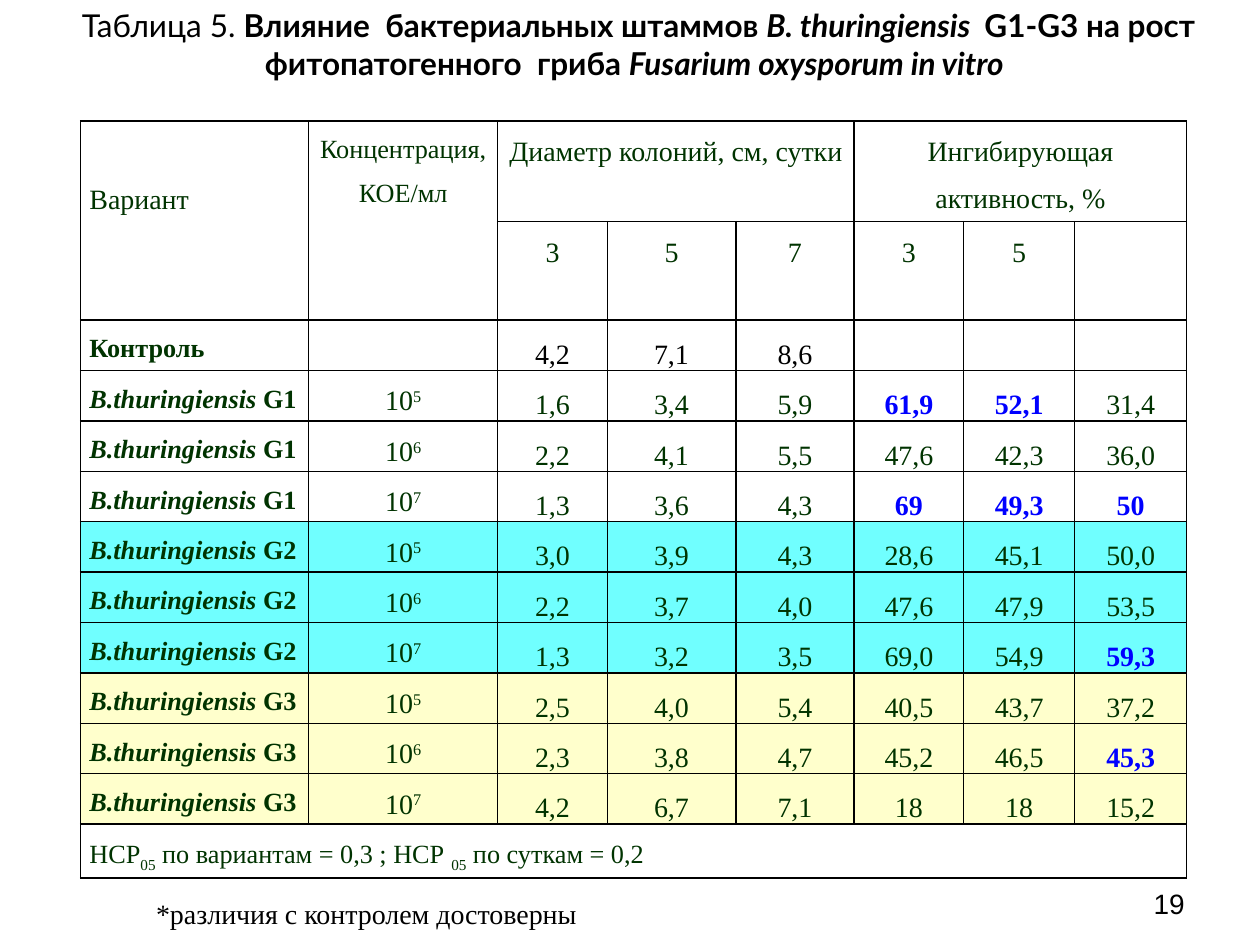
import pptx
import pptx.dml.color
import pptx.enum.text
import pptx.oxml
import pptx.oxml.ns
import pptx.util

Inches = pptx.util.Inches
Pt = pptx.util.Pt
ALIGN = pptx.enum.text.PP_ALIGN
ANCHOR = pptx.enum.text.MSO_ANCHOR

COLORS = {
    "black": "000000",
    "green": "003300",
    "blue": "0000FF",
    "cyan": "70FFFF",
    "cream": "FFFFCC",
}
SERIF = "Times New Roman"

TITLE = [
    (" Таблица 5. ", {}),
    ("Влияние  бактериальных штаммов ", {"bold": True}),
    ("B. thuringiensis  ", {"bold": True, "italic": True}),
    ("G1-G3 на рост фитопатогенного  гриба ", {"bold": True}),
    ("Fusarium oxysporum in vitro", {"bold": True, "italic": True}),
]
FOOTNOTE = "*различия с контролем достоверны"
PAGE_NUMBER = "19"

HEADERS = [
    (0, 0, 1, 0, "Вариант", 16, ALIGN.LEFT, 0.38),
    (0, 1, 1, 1, "Концентрация, КОЕ/мл", 15, ALIGN.CENTER, 0),
    (0, 2, 0, 4, "Диаметр колоний, см, сутки", 16, ALIGN.CENTER, 0),
    (0, 5, 0, 7, "Ингибирующая активность, %", 16, ALIGN.CENTER, 0),
]
DAYS = ["3", "5", "7", "3", "5"]
CONTROL = ("Контроль", ["4,2", "7,1", "8,6"])
STRAINS = [
    ("G1", None, [
        ("5", ["1,6", "3,4", "5,9", "61,9", "52,1", "31,4"]),
        ("6", ["2,2", "4,1", "5,5", "47,6", "42,3", "36,0"]),
        ("7", ["1,3", "3,6", "4,3", "69", "49,3", "50"]),
    ]),
    ("G2", "cyan", [
        ("5", ["3,0", "3,9", "4,3", "28,6", "45,1", "50,0"]),
        ("6", ["2,2", "3,7", "4,0", "47,6", "47,9", "53,5"]),
        ("7", ["1,3", "3,2", "3,5", "69,0", "54,9", "59,3"]),
    ]),
    ("G3", "cream", [
        ("5", ["2,5", "4,0", "5,4", "40,5", "43,7", "37,2"]),
        ("6", ["2,3", "3,8", "4,7", "45,2", "46,5", "45,3"]),
        ("7", ["4,2", "6,7", "7,1", "18", "18", "15,2"]),
    ]),
]
SIGNIFICANT = {
    ("G1", "5"): {5, 6},
    ("G1", "7"): {5, 6, 7},
    ("G2", "7"): {7},
    ("G3", "6"): {7},
}
SUMMARY = [
    ("НСР", {}),
    ("05", {"baseline": -25}),
    (" по вариантам = 0,3 ; НСР ", {}),
    ("05", {"baseline": -25}),
    (" по суткам = 0,2", {}),
]

COLUMN_WIDTHS = [1.81, 1.5, 0.87, 1.02, 0.94, 0.87, 0.88, 0.89]
ROW_HEIGHTS = [0.8, 0.75] + [0.4] * 10 + [0.42]
FIRST_VALUE, FIRST_INHIBITION = 2, 5


def write(paragraph, runs, size, font=SERIF, color="green"):
    for text, style in runs:
        run = paragraph.add_run()
        run.text = text
        run.font.name = font
        run.font.size = Pt(size)
        run.font.bold = style.get("bold", False)
        run.font.italic = style.get("italic", False)
        run.font.color.rgb = pptx.dml.color.RGBColor.from_string(
            COLORS[style.get("color", color)])
        if "baseline" in style:
            run._r.get_or_add_rPr().set("baseline", str(style["baseline"] * 1000))


def add_text(slide, box, runs, size, font, alignment, anchor=ANCHOR.TOP):
    shape = slide.shapes.add_textbox(*[Inches(length) for length in box])
    shape.text_frame.word_wrap = True
    shape.text_frame.vertical_anchor = anchor
    paragraph = shape.text_frame.paragraphs[0]
    paragraph.alignment = alignment
    write(paragraph, runs, size, font, "black")


def write_cell(cell, runs, size, alignment=ALIGN.CENTER, top=0, side=0.07,
               spacing=1.5, anchor=ANCHOR.TOP, color="green"):
    cell.margin_left = cell.margin_right = Inches(side)
    cell.margin_top, cell.margin_bottom = Inches(top), 0
    cell.vertical_anchor = anchor
    paragraph = cell.text_frame.paragraphs[0]
    paragraph.alignment = alignment
    paragraph.line_spacing = spacing
    write(paragraph, runs, size, color=color)


def write_value(cell, column, text, style):
    inhibition = column >= FIRST_INHIBITION
    write_cell(cell, [(text, style)], 16, top=0.01, anchor=ANCHOR.BOTTOM,
               side=0.01 if inhibition else 0.07,
               spacing=1.0 if inhibition else 1.15)
    if not inhibition:
        cell.text_frame.paragraphs[0].space_after = Pt(10)


def draw_borders(cell):
    properties = cell._tc.get_or_add_tcPr()
    for side in ("lnL", "lnR", "lnT", "lnB"):
        properties.append(pptx.oxml.parse_xml(
            f'<a:{side} {pptx.oxml.ns.nsdecls("a")} w="12700"><a:solidFill>'
            f'<a:srgbClr val="{COLORS["black"]}"/></a:solidFill></a:{side}>'))


def fill_cell(cell, color):
    if color:
        cell.fill.solid()
        cell.fill.fore_color.rgb = pptx.dml.color.RGBColor.from_string(COLORS[color])
    else:
        cell.fill.background()


def add_results(slide):
    table = slide.shapes.add_table(
        len(ROW_HEIGHTS), len(COLUMN_WIDTHS), Inches(0.64), Inches(0.96),
        Inches(sum(COLUMN_WIDTHS)), Inches(sum(ROW_HEIGHTS))).table
    table.first_row = table.horz_banding = False
    for column, width in zip(table.columns, COLUMN_WIDTHS):
        column.width = Inches(width)
    for row, height in zip(table.rows, ROW_HEIGHTS):
        row.height = Inches(height)

    fills = [None] * 3 + [fill for _, fill, doses in STRAINS for _ in doses] + [None]
    for row, fill in zip(table.rows, fills):
        for cell in row.cells:
            draw_borders(cell)
            fill_cell(cell, fill)

    for top, left, bottom, right, text, size, alignment, margin in HEADERS:
        table.cell(top, left).merge(table.cell(bottom, right))
        write_cell(table.cell(top, left), [(text, {})], size, alignment, margin)
    for column, day in enumerate(DAYS, FIRST_VALUE):
        write_cell(table.cell(1, column), [(day, {})], 16)

    name, values = CONTROL
    write_cell(table.cell(2, 0), [(name, {"bold": True})], 15, ALIGN.LEFT)
    for column, value in enumerate(values, FIRST_VALUE):
        write_value(table.cell(2, column), column, value, {"color": "black"})

    trials = [(strain, *dose) for strain, _, doses in STRAINS for dose in doses]
    for row, (strain, power, values) in enumerate(trials, 3):
        species = [("B.thuringiensis", {"bold": True, "italic": True}),
                   (f" {strain}", {"bold": True})]
        write_cell(table.cell(row, 0), species, 15, ALIGN.LEFT)
        write_cell(table.cell(row, 1), [("10", {}), (power, {"baseline": 30})], 16)
        for column, value in enumerate(values, FIRST_VALUE):
            significant = column in SIGNIFICANT.get((strain, power), ())
            style = {"bold": True, "color": "blue"} if significant else {}
            write_value(table.cell(row, column), column, value, style)

    last = len(ROW_HEIGHTS) - 1
    table.cell(last, 0).merge(table.cell(last, len(COLUMN_WIDTHS) - 1))
    write_cell(table.cell(last, 0), SUMMARY, 15, ALIGN.LEFT)


def main():
    presentation = pptx.Presentation()
    presentation.slide_width, presentation.slide_height = Inches(10), Inches(7.5)
    slide = presentation.slides.add_slide(presentation.slide_layouts[6])
    add_text(slide, (0.39, 0, 9.29, 0.71), TITLE, 18, "Lato", ALIGN.CENTER)
    add_text(slide, (1.14, 7.07, 5, 0.37), [(FOOTNOTE, {})], 16, SERIF, ALIGN.LEFT)
    add_results(slide)
    add_text(slide, (7.17, 6.83, 2.33, 0.52), [(PAGE_NUMBER, {})], 16, "Arial",
             ALIGN.RIGHT, ANCHOR.BOTTOM)
    presentation.save("out.pptx")


if __name__ == "__main__":
    main()
